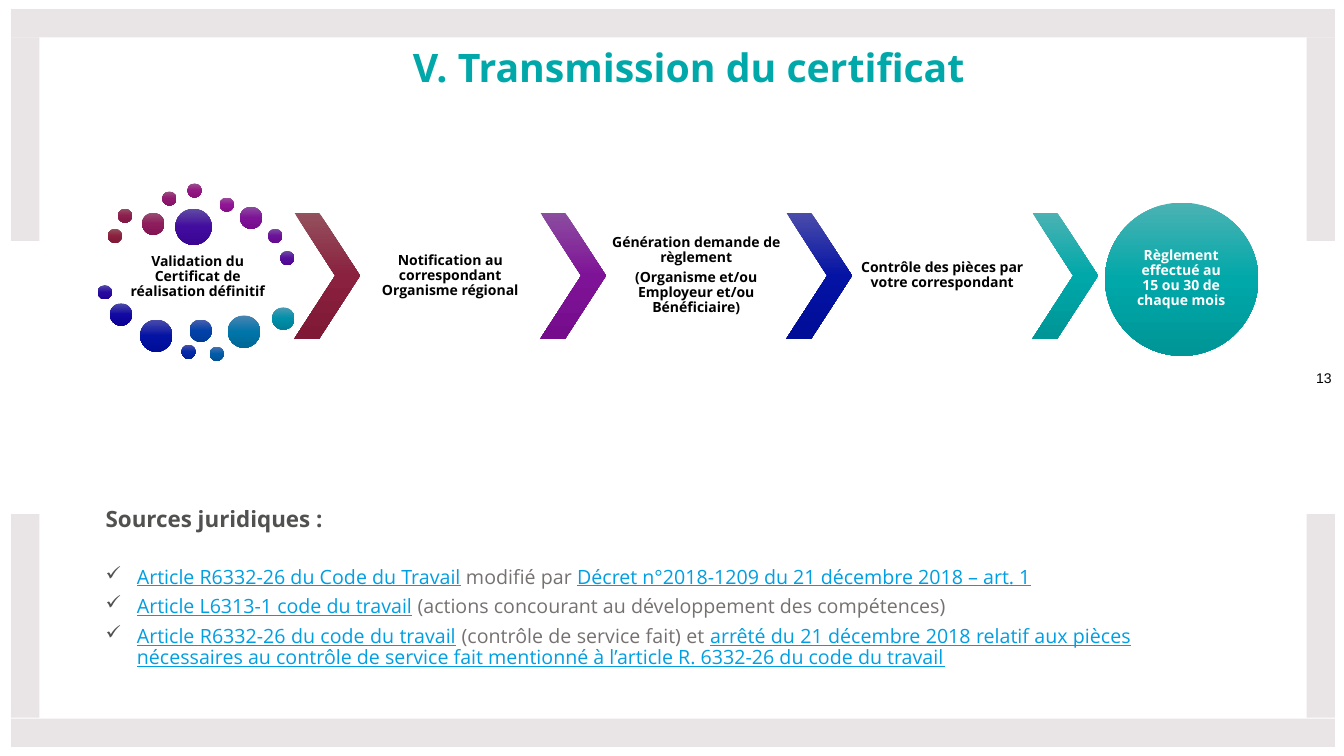
from copy import deepcopy

from lxml.etree import SubElement
from pptx import Presentation
from pptx.dml.color import RGBColor
from pptx.enum.shapes import MSO_SHAPE as Kind
from pptx.enum.text import MSO_ANCHOR as Anchor, MSO_AUTO_SIZE as Fit, PP_ALIGN as Align
from pptx.oxml.ns import qn
from pptx.util import Inches, Pt

WIDE, HIGH = 13.33, 7.5
FACE = "Open Sans"
TEAL, LINK, GREY, DARK, FRAME = "00A8A9", "009EE2", "767171", "515250", "E9E4E5"

TITLE = "V. Transmission du certificat"
PAGE = "13"
START = "Validation du Certificat de réalisation définitif"
STEPS = [
    ["Notification au correspondant Organisme régional"],
    ["Génération demande de règlement", "(Organisme et/ou Employeur et/ou Bénéficiaire)"],
    ["Contrôle des pièces par votre correspondant"],
]
END = "Règlement effectué au\v15 ou 30 de chaque mois"

# Gradients, each from top to bottom
RED = ("94515E", "8A213E", "7F1935")
PURPLE = ("8B4D9F", "7F1397", "750C8C")
BLUE = ("4B4DAA", "0513A4", "000D97")
SEA = ("4BB2B3", "00A8A9", "009596")
ARROWS = [RED, PURPLE, BLUE, SEA]

# Left, top, diameter, gradient
DOTS = [
    (1.07, 2.27, 0.14, RED),
    (1.17, 2.07, 0.14, ("965067", "8C1F4D", "811744")),
    (1.41, 2.11, 0.22, ("984F72", "8E1D5E", "831554")),
    (1.61, 1.90, 0.14, ("994F80", "901A70", "851366")),
    (1.86, 1.82, 0.14, ("9B4E8F", "931884", "871079")),
    (2.18, 1.96, 0.14, ("9A4E9D", "911695", "860E89")),
    (2.38, 2.05, 0.22, PURPLE),
    (2.66, 2.27, 0.14, ("7D4DA1", "6C1199", "620A8E")),
    (2.78, 2.49, 0.14, ("6E4CA3", "570F9C", "4E0790")),
    (1.74, 2.07, 0.36, ("604CA4", "420C9E", "390592")),
    (0.97, 2.83, 0.14, ("544CA6", "2A0AA0", "220394")),
    (1.09, 3.01, 0.22, ("4D4CA8", "1208A2", "0A0196")),
    (1.39, 3.17, 0.32, BLUE),
    (1.80, 3.42, 0.14, ("4B54AC", "032AA7", "002497")),
    (1.88, 3.17, 0.22, ("4B60AE", "0142A9", "003B97")),
    (2.08, 3.44, 0.14, ("4B71B0", "005CA9", "005196")),
    (2.26, 3.13, 0.32, ("4B85B1", "0075A9", "006896")),
    (2.70, 3.05, 0.22, ("4B9BB3", "008FA9", "007F96")),
]

HEAD = "Sources juridiques :"
# Runs alternate: cited text, plain text, cited text
SOURCES = [
    ["Article R6332-26 du Code du Travail", " modifié par ",
     "Décret n°2018-1209 du 21 décembre 2018 – art. 1"],
    ["Article L6313-1 code du travail",
     " (actions concourant au développement des compétences)"],
    ["Article R6332-26 du code du travail", " (contrôle de service fait) et ",
     "arrêté du 21 décembre 2018 relatif aux pièces nécessaires au contrôle de "
     "service fait mentionné à l’article R. 6332-26 du code du travail"],
]

deck = Presentation()
deck.slide_width, deck.slide_height = Inches(WIDE), Inches(HIGH)
slide = deck.slides.add_slide(deck.slide_layouts[5])
shapes = slide.shapes


def rgb(code):
    return RGBColor.from_string(code)


def draw(kind, x, y, w, h, paint):
    """Add a preset shape; paint is one colour or a gradient triple."""
    shape = shapes.add_shape(kind, Inches(x), Inches(y), Inches(w), Inches(h))
    shape.shadow.inherit = False
    shape.line.fill.background()
    fill = shape.fill
    if isinstance(paint, str):
        fill.solid()
        fill.fore_color.rgb = rgb(paint)
        return shape
    fill.gradient()
    fill.gradient_angle = 270
    stops = shape._element.spPr.find(qn("a:gradFill")).find(qn("a:gsLst"))
    stops.append(deepcopy(stops[0]))
    for stop, place, code in zip(fill.gradient_stops, (0, 0.5, 1), paint):
        stop.position = place
        stop.color.rgb = rgb(code)
    return shape


def setup(frame, inset, anchor):
    frame.word_wrap = True
    frame.auto_size = Fit.NONE
    frame.vertical_anchor = anchor
    frame.margin_left = frame.margin_right = Inches(inset)
    frame.margin_top = frame.margin_bottom = Inches(inset)


def style(par, size, code, bold=True, face=FACE, align=Align.CENTER):
    par.alignment = align
    par.line_spacing = 0.9
    font = par.font
    font.size, font.bold, font.name = Pt(size), bold, face
    font.color.rgb = rgb(code)


def write(x, y, w, h, lines, size=10, code="000000", bold=True, face=FACE):
    box = shapes.add_textbox(Inches(x), Inches(y), Inches(w), Inches(h))
    frame = box.text_frame
    setup(frame, 0.01, Anchor.MIDDLE)
    for i, line in enumerate(lines):
        par = frame.add_paragraph() if i else frame.paragraphs[0]
        par.text = line
        par.space_after = Pt(3.5)
        style(par, size, code, bold, face)


def tick(par):
    props = par._p.get_or_add_pPr()
    props.set("marL", str(Inches(0.31)))
    props.set("indent", str(-Inches(0.31)))
    tint = SubElement(props, qn("a:buClr"))
    SubElement(tint, qn("a:srgbClr"), val=DARK)
    SubElement(props, qn("a:buChar"), char="✓")


def frame_page():
    edge, bar, side = 0.11, 0.28, 2.02
    right = 13.24
    for y in (0.09, 7.13):
        draw(Kind.RECTANGLE, edge, y, right - edge, bar, FRAME)
    for x in (edge, right - bar):
        for y in (0.37, 5.1):
            draw(Kind.RECTANGLE, x, y, bar, side, FRAME)


def head_page():
    title = shapes.title
    title.left, title.top = Inches(0.23), Inches(0.48)
    title.width, title.height = Inches(13.2), Inches(0.32)
    title.text_frame.text = TITLE
    setup(title.text_frame, 0, Anchor.TOP)
    style(title.text_frame.paragraphs[0], 28, TEAL)
    write(12.96, 2.51, 0.34, 2.49, [PAGE], bold=False, face="Arial")


def flow():
    left, top, pitch, arrow, tall = 2.92, 2.11, 2.44, 0.65, 1.25
    write(1.25, 2.45, 1.42, 0.59, [START])
    for x, y, size, paint in DOTS:
        draw(Kind.OVAL, x, y, size, size, paint)
    for i, paint in enumerate(ARROWS):
        x = left + i * pitch
        draw(Kind.CHEVRON, x, top, arrow, tall, paint).adjustments[0] = 0.623
        if i < len(STEPS):
            write(x + arrow, top, pitch - arrow, tall, STEPS[i])
    draw(Kind.OVAL, 10.96, 2.01, 1.52, 1.52, SEA)
    write(11.18, 2.23, 1.07, 1.07, [END], code="FFFFFF")


def cite():
    box = shapes.add_textbox(Inches(0.95), Inches(4.99), Inches(10.37), Inches(1.83))
    frame = box.text_frame
    frame.word_wrap = True
    head = frame.paragraphs[0]
    head.text = HEAD
    style(head, 16, DARK, align=Align.LEFT)
    for i, parts in enumerate(SOURCES):
        par = frame.add_paragraph()
        par.space_before = Pt(6 if i else 25)
        tick(par)
        style(par, 14, GREY, bold=False, align=Align.JUSTIFY)
        for j, part in enumerate(parts):
            run = par.add_run()
            run.text = part
            if j % 2 == 0:
                run.font.underline = True
                run.font.color.rgb = rgb(LINK)


frame_page()
head_page()
flow()
cite()
deck.save("out.pptx")
